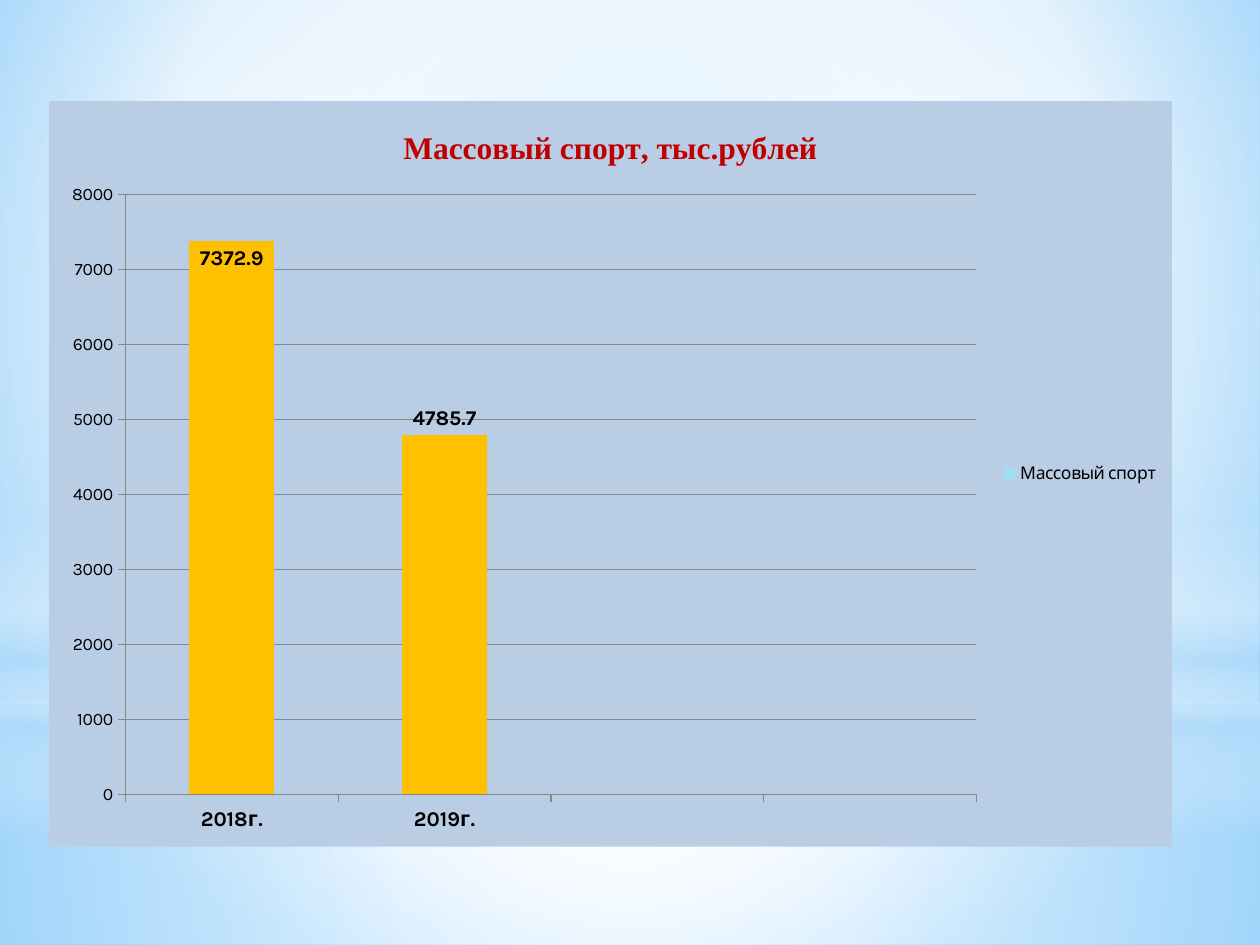
from dataclasses import dataclass

from lxml import etree
from pptx import Presentation
from pptx import util as u
from pptx.chart.data import CategoryChartData
from pptx.dml.color import RGBColor
from pptx.enum import chart as ch
from pptx.enum import shapes
from pptx.oxml import parse_xml
from pptx.oxml.ns import nsdecls


@dataclass(frozen=True)
class Theme:
    """Colours, fonts and type sizes of the slide."""
    white: str = "FFFFFF"
    haze: str = "B4DCFA"
    sky: str = "9ED5FF"
    deep: str = "5BB9FF"
    panel: str = "B9CDE5"
    bar: str = "FFC000"
    key: str = "9EE0F8"
    grid: str = "878787"
    head: str = "C00000"
    ink: str = "000000"
    font: str = "Karla"
    serif: str = "Times New Roman"
    small: int = 10
    mid: int = 12
    big: int = 18


class Deck:
    """Holds the theme and the current slide; places items by shares of its size."""

    def __init__(self, theme):
        self.theme = theme
        self.prs = Presentation()
        self.prs.slide_width, self.prs.slide_height = u.Inches(10), u.Inches(7.5)
        self.slide = self.prs.slides.add_slide(self.prs.slide_layouts[6])

    def place(self, left, top, width, height):
        """Turn shares of the slide into lengths."""
        wide, high = self.prs.slide_width, self.prs.slide_height
        return int(left * wide), int(top * high), int(width * wide), int(height * high)

    def blend(self, fill, stops, focus=None):
        """Swap a solid fill for a gradient, round a focus or straight down."""
        marks = "".join(
            f'<a:gs pos="{pos * 1000}"><a:srgbClr val="{hue}">'
            f'<a:alpha val="{alpha * 1000}"/></a:srgbClr></a:gs>'
            for pos, hue, alpha in stops)
        if focus:
            sides = " ".join(f'{s}="{v * 1000}"' for s, v in zip("ltrb", focus))
            way = f'<a:path path="circle"><a:fillToRect {sides}/></a:path>'
        else:
            way = '<a:lin ang="5400000" scaled="0"/>'
        grad = parse_xml(f'<a:gradFill {nsdecls("a")} rotWithShape="1">'
                         f'<a:gsLst>{marks}</a:gsLst>{way}</a:gradFill>')
        old = fill.find(".//{*}solidFill")
        old.getparent().replace(old, grad)

    def back(self, stops, focus):
        """Paint the slide background."""
        self.slide.background.fill.solid()
        self.blend(self.slide.background._cSld, stops, focus)

    def glow(self, kind, box, stops, focus=None):
        """Add a borderless shape with a gradient."""
        shape = self.slide.shapes.add_shape(kind, *self.place(*box))
        shape.shadow.inherit = False
        shape.line.fill.background()
        shape.fill.solid()
        self.blend(shape._element, stops, focus)

    def type(self, font, size, bold=False, hue=None, name=None):
        """Set a font."""
        font.size, font.bold = u.Pt(size), bold
        font.name = name or self.theme.font
        font.color.rgb = RGBColor.from_string(hue or self.theme.ink)

    def stroke(self, line):
        """Set an axis or grid line."""
        line.color.rgb = RGBColor.from_string(self.theme.grid)
        line.width = u.Pt(0.75)

    def bars(self, box, title, name, cats, vals, plot):
        """Add a column chart on a panel, its plot area given in shares."""
        t = self.theme
        data = CategoryChartData()
        data.categories = cats
        data.add_series(name, vals)
        chart = self.slide.shapes.add_chart(
            ch.XL_CHART_TYPE.COLUMN_CLUSTERED, *self.place(*box), data).chart
        self.type(chart.font, t.small)
        chart._chartSpace.find("{*}chart").addnext(parse_xml(
            f'<c:spPr {nsdecls("c", "a")}><a:solidFill><a:srgbClr val="{t.panel}"/>'
            '</a:solidFill><a:ln><a:noFill/></a:ln></c:spPr>'))

        chart.has_title = True
        chart.chart_title.include_in_layout = False
        frame = chart.chart_title.text_frame
        frame.text = title
        self.type(frame.paragraphs[0].font, t.big, True, t.head, t.serif)
        chart.has_legend = True
        chart.legend.position = ch.XL_LEGEND_POSITION.RIGHT
        chart.legend.include_in_layout = False
        self.type(chart.legend.font, t.small)

        for axis in (chart.category_axis, chart.value_axis):
            axis.major_tick_mark = ch.XL_TICK_MARK.OUTSIDE
            self.stroke(axis.format.line)
        self.type(chart.category_axis.tick_labels.font, t.mid, True)
        axis = chart.value_axis
        axis.minimum_scale, axis.maximum_scale, axis.major_unit = 0, 8000, 1000
        self.stroke(axis.major_gridlines.format.line)
        self.type(axis.tick_labels.font, t.small)

        group = chart.plots[0]
        group.gap_width, group.vary_by_categories = 150, False
        row = group.series[0]
        row.format.fill.solid()
        row.format.fill.fore_color.rgb = RGBColor.from_string(t.key)
        for i, val in enumerate(vals):
            if val is not None:
                fill = row.points[i].format.fill
                fill.solid()
                fill.fore_color.rgb = RGBColor.from_string(t.bar)
        labels = row.data_labels
        labels.show_value = True
        labels.position = ch.XL_LABEL_POSITION.OUTSIDE_END
        self.type(labels.font, t.mid, True)
        first = row.points[0].data_label
        self.type(first.font, t.mid, True)
        first.position = ch.XL_LABEL_POSITION.INSIDE_END

        area = chart._chartSpace.find(".//{*}plotArea")
        for old in area.findall("{*}layout"):
            area.remove(old)
        layout = parse_xml(f'<c:layout {nsdecls("c")}><c:manualLayout/></c:layout>')
        rules = [("layoutTarget", "inner"), ("xMode", "edge"), ("yMode", "edge")]
        for tag, val in rules + list(zip("xywh", plot)):
            etree.SubElement(layout[0], f"{{{layout.nsmap['c']}}}{tag}", val=str(val))
        area.insert(0, layout)


def main():
    """Build the slide."""
    t = Theme()
    deck = Deck(t)
    rect, oval = shapes.MSO_SHAPE.RECTANGLE, shapes.MSO_SHAPE.OVAL
    mid = (50, 50, 50, 50)
    split = 0.744
    deck.back([(0, t.sky, 100), (60, t.white, 100), (100, t.deep, 100)], (20, 10, 20, 60))
    deck.glow(rect, (0, split, 1, 1 - split),
              [(0, t.white, 91), (37, t.white, 76), (100, t.haze, 79)], mid)
    deck.glow(rect, (0, 0, 1, split),
              [(0, t.white, 89), (48, t.white, 62), (100, t.haze, 79)], mid)
    deck.glow(rect, (0, 0.55, 1, 1 / 3),
              [(0, t.white, 0), (29, t.white, 30), (45, t.haze, 40),
               (55, t.white, 26), (65, t.haze, 60), (100, t.white, 0)])
    deck.glow(oval, (0, 0.233, 1, split), [(0, t.white, 100), (56, t.white, 0)], mid)
    deck.bars((0.039, 0.107, 0.891, 0.789), "Массовый спорт, тыс.рублей",
              "Массовый спорт", ["2018г.", "2019г.", "", ""],
              [7372.9, 4785.7, None, None], (0.068, 0.125, 0.758, 0.805))
    deck.prs.save("out.pptx")


if __name__ == "__main__":
    main()
